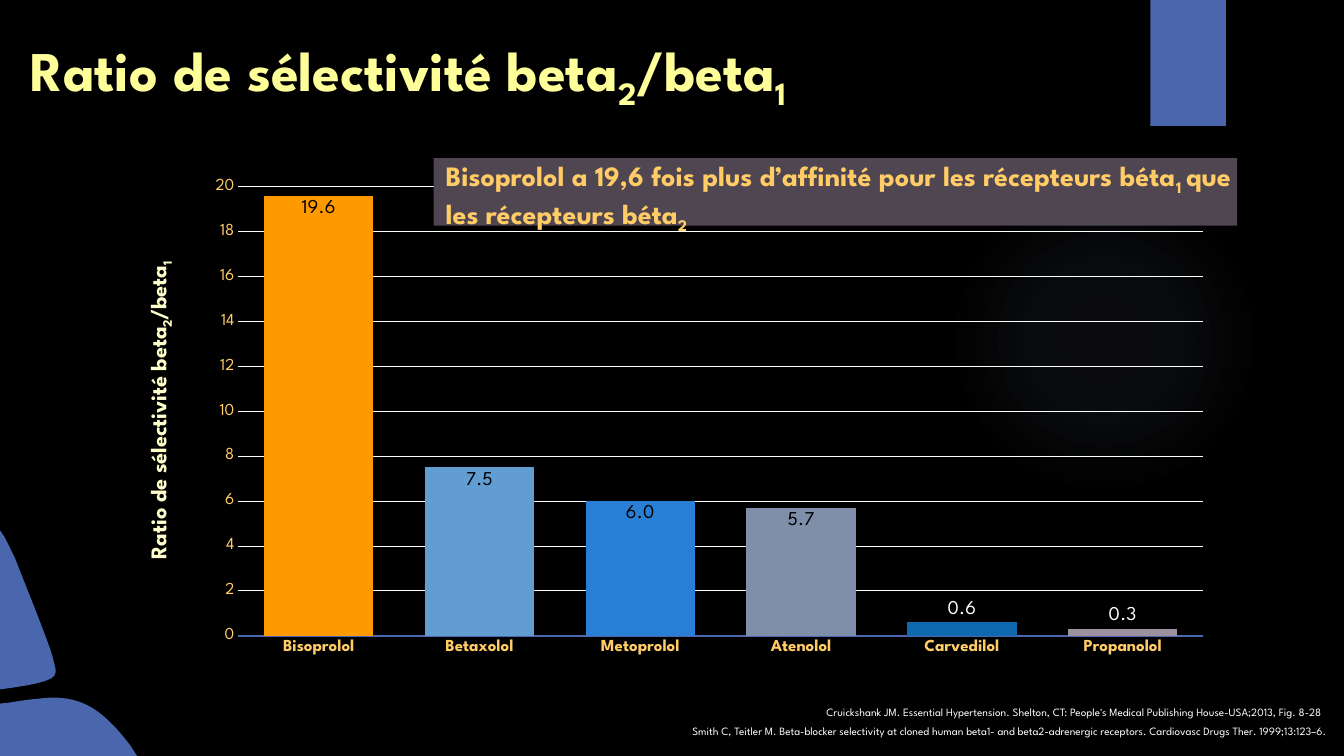
from lxml import etree
from pptx import Presentation
from pptx.chart.data import CategoryChartData
from pptx.dml.color import RGBColor
from pptx.enum.chart import XL_CHART_TYPE, XL_LABEL_POSITION, XL_TICK_MARK
from pptx.enum.shapes import MSO_SHAPE
from pptx.enum.text import MSO_ANCHOR, PP_ALIGN
from pptx.oxml import parse_xml
from pptx.oxml.ns import nsdecls, qn
from pptx.util import Inches, Pt

FONT = "League Spartan"
BLACK = RGBColor(0x00, 0x00, 0x00)
WHITE = RGBColor(0xFF, 0xFF, 0xFF)
BLUE = RGBColor(0x4A, 0x66, 0xAC)
YELLOW = RGBColor(0xFF, 0xFF, 0x99)
CREAM = RGBColor(0xFF, 0xFF, 0xCC)
GOLD = RGBColor(0xFF, 0xCC, 0x66)
PLUM = RGBColor(0x50, 0x46, 0x52)

RATIO_NAME = ("Ratio de sélectivité beta", "2", "/beta", "1")
RATIOS = [
    ("Bisoprolol", 19.6, RGBColor(0xFF, 0x99, 0x00)),
    ("Betaxolol", 7.5, RGBColor(0x62, 0x9D, 0xD1)),
    ("Metoprolol", 6.0, RGBColor(0x29, 0x7F, 0xD5)),
    ("Atenolol", 5.7, RGBColor(0x7F, 0x8F, 0xA9)),
    ("Carvedilol", 0.6, RGBColor(0x0F, 0x69, 0xAF)),
    ("Propanolol", 0.3, RGBColor(0x9D, 0x90, 0xA0)),
]
REFERENCES = [
    ("Cruickshank JM. Essential Hypertension. Shelton, CT: People's Medical Publishing House-USA;2013, Fig. 8-28",
     0.05),
    ("Smith C, Teitler M. Beta-blocker selectivity at cloned human beta1- and beta2-adrenergic receptors. "
     "Cardiovasc Drugs Ther. 1999;13:123–6.", 0),
]
LOWER_PETAL = [
    (0.51, 6.92), (0.82, 6.92, 1.01, 7.03, 1.29, 7.39), (1.36, 7.5, 1.36, 7.5, 1.36, 7.5),
    (0, 7.5), (0, 6.98), (0.1, 6.97), (0.26, 6.94, 0.39, 6.93, 0.51, 6.92),
]
UPPER_PETAL = [
    (0, 5.26), (0.04, 5.32), (0.08, 5.39, 0.11, 5.46, 0.15, 5.54),
    (0.23, 5.75, 0.51, 6.43, 0.53, 6.55), (0.56, 6.67, 0.59, 6.72, 0.4, 6.77),
    (0.33, 6.79, 0.21, 6.81, 0.07, 6.83), (0, 6.84),
]


def style_font(font, size, color, bold=False):
    for name, value in {"name": FONT, "size": Pt(size), "bold": bold}.items():
        setattr(font, name, value)
    font.color.rgb = color


def write_runs(paragraph, pieces, size, color, bold=False):
    for index, piece in enumerate(pieces):
        run = paragraph.add_run()
        run.text = piece
        style_font(run.font, size, color, bold)
        if index % 2:
            run.font._element.set("baseline", "-25000")


def set_frame(frame, insets):
    frame.word_wrap = True
    frame.vertical_anchor = MSO_ANCHOR.TOP
    for side, inset in zip(("left", "top", "right", "bottom"), insets):
        setattr(frame, f"margin_{side}", Inches(inset))


def paint(shape, color):
    shape.shadow.inherit = False
    shape.fill.solid()
    shape.fill.fore_color.rgb = color
    shape.line.fill.background()


def flatten(outline, steps=12):
    points = [outline[0]]
    for segment in outline[1:]:
        if len(segment) == 2:
            points.append(segment)
            continue
        x0, y0 = points[-1]
        x1, y1, x2, y2, x3, y3 = segment
        for step in range(1, steps + 1):
            t = step / steps
            a, b, c, d = (1 - t) ** 3, 3 * t * (1 - t) ** 2, 3 * t * t * (1 - t), t ** 3
            points.append((a * x0 + b * x1 + c * x2 + d * x3, a * y0 + b * y1 + c * y2 + d * y3))
    return [(Inches(x), Inches(y)) for x, y in points]


def add_glow(slide, left, top, width, height):
    glow = slide.shapes.add_shape(MSO_SHAPE.OVAL, *map(Inches, (left, top, width, height)))
    paint(glow, BLUE)
    stops = "".join(
        f'<a:gs pos="{place * 1000}"><a:srgbClr val="90A2CF"><a:alpha val="{alpha * 1000}"/></a:srgbClr></a:gs>'
        for place, alpha in ((0, 7), (36, 6), (69, 0))
    )
    gradient = parse_xml(
        f'<a:gradFill {nsdecls("a")}><a:gsLst>{stops}</a:gsLst><a:path path="circle">'
        '<a:fillToRect l="50000" t="50000" r="50000" b="50000"/></a:path></a:gradFill>'
    )
    properties = glow._element.spPr
    properties.replace(properties.find(qn("a:solidFill")), gradient)


def add_decor(slide):
    add_glow(slide, 9.41, 1.83, 3.08, 3.08)
    tab = slide.shapes.add_shape(MSO_SHAPE.RECTANGLE, Inches(11.41), 0, Inches(0.75), Inches(1.25))
    paint(tab, BLUE)
    for outline in (LOWER_PETAL, UPPER_PETAL):
        points = flatten(outline)
        builder = slide.shapes.build_freeform(*points[0])
        builder.add_line_segments(points[1:], close=True)
        paint(builder.convert_to_shape(), BLUE)


def add_title(slide, left, top, width, height):
    title = slide.shapes.add_textbox(*map(Inches, (left, top, width, height)))
    set_frame(title.text_frame, (0.09, 0.05, 0.1, 0.05))
    write_runs(title.text_frame.paragraphs[0], RATIO_NAME, 40, YELLOW, True)


def place_manually(parent, index, **settings):
    for old in parent.findall(qn("c:layout")):
        parent.remove(old)
    layout = etree.Element(qn("c:layout"))
    manual = etree.SubElement(layout, qn("c:manualLayout"))
    for tag, value in settings.items():
        etree.SubElement(manual, qn(f"c:{tag}")).set("val", str(value))
    parent.insert(index, layout)


def style_axes(chart):
    drugs, scale = chart.category_axis, chart.value_axis
    for axis in (drugs, scale):
        axis.major_tick_mark = axis.minor_tick_mark = XL_TICK_MARK.NONE
    style_font(drugs.tick_labels.font, 12, GOLD, True)
    drugs.format.line.color.rgb = BLUE
    drugs.format.line.width = Pt(1)
    style_font(scale.tick_labels.font, 12, GOLD)
    scale.tick_labels.number_format = "#,##0"
    scale.tick_labels.number_format_is_linked = False
    for name, value in {"minimum_scale": 0, "maximum_scale": 20, "major_unit": 2}.items():
        setattr(scale, name, value)
    scale.format.line.fill.background()
    scale.major_gridlines.format.line.color.rgb = WHITE
    scale.major_gridlines.format.line.width = Pt(0.75)
    heading = scale.axis_title.text_frame
    write_runs(heading.paragraphs[0], RATIO_NAME, 16, CREAM, True)
    heading._txBody.bodyPr.set("rot", "-5400000")
    heading._txBody.bodyPr.set("vert", "horz")
    place_manually(scale.axis_title._element, 1, xMode="edge", yMode="edge", x=0.02, y=0.21)


def style_bars(plot):
    for name, value in {"gap_width": 47, "overlap": 65, "vary_by_categories": False}.items():
        setattr(plot, name, value)
    bars = plot.series[0]
    labels = bars.data_labels
    for name, value in {"show_value": True, "number_format": "#,##0.0", "number_format_is_linked": False,
                        "position": XL_LABEL_POSITION.INSIDE_END}.items():
        setattr(labels, name, value)
    style_font(labels.font, 14, BLACK)
    for index, (drug, ratio, color) in enumerate(RATIOS):
        fill = bars.points[index].format.fill
        fill.solid()
        fill.fore_color.rgb = color
        if ratio < 1:
            label = bars.points[index].data_label
            style_font(label.font, 14, WHITE)
            label.position = XL_LABEL_POSITION.OUTSIDE_END


def add_ratio_chart(slide, left, top, width, height):
    data = CategoryChartData(number_format="#,##0.0")
    data.categories = [drug for drug, ratio, color in RATIOS]
    data.add_series("Series 1", [ratio for drug, ratio, color in RATIOS])
    box = map(Inches, (left, top, width, height))
    chart = slide.shapes.add_chart(XL_CHART_TYPE.COLUMN_CLUSTERED, *box, data).chart
    chart.has_legend = chart.has_title = False
    style_font(chart.font, 10, WHITE)
    style_axes(chart)
    style_bars(chart.plots[0])
    place_manually(chart._chartSpace.chart.plotArea, 0, layoutTarget="inner", xMode="edge", yMode="edge",
                   x=0.106, y=0.083, w=0.894, h=0.797)


def add_references(slide, left, top, width, height):
    sources = slide.shapes.add_textbox(*map(Inches, (left, top, width, height)))
    frame = sources.text_frame
    set_frame(frame, (0.05,) * 4)
    for index, (reference, indent) in enumerate(REFERENCES):
        paragraph = frame.add_paragraph() if index else frame.paragraphs[0]
        paragraph.alignment = PP_ALIGN.RIGHT
        paragraph._p.get_or_add_pPr().set("marR", str(Inches(indent)))
        if index:
            paragraph.space_before = Pt(4)
        write_runs(paragraph, (reference,), 8, WHITE)


def add_callout(slide, left, top, width, height):
    callout = slide.shapes.add_shape(MSO_SHAPE.RECTANGLE, *map(Inches, (left, top, width, height)))
    paint(callout, PLUM)
    set_frame(callout.text_frame, (0.12, 0, 0, 0))
    paragraph = callout.text_frame.paragraphs[0]
    paragraph.alignment = PP_ALIGN.LEFT
    pieces = ("Bisoprolol a 19,6 fois plus d’affinité pour les récepteurs béta", "1 ", "que les récepteurs béta", "2")
    write_runs(paragraph, pieces, 20, GOLD, True)


def main():
    deck = Presentation()
    deck.slide_width, deck.slide_height = Inches(13.33), Inches(7.5)
    slide = deck.slides.add_slide(deck.slide_layouts[6])
    slide.background.fill.solid()
    slide.background.fill.fore_color.rgb = BLACK
    add_decor(slide)
    add_title(slide, 0.21, 0.3, 11.97, 0.69)
    add_ratio_chart(slide, 1.23, 1.39, 10.71, 5.59)
    add_references(slide, 3.36, 6.95, 9.86, 0.43)
    add_callout(slide, 4.3, 1.57, 7.97, 0.67)
    deck.save("out.pptx")


if __name__ == "__main__":
    main()
